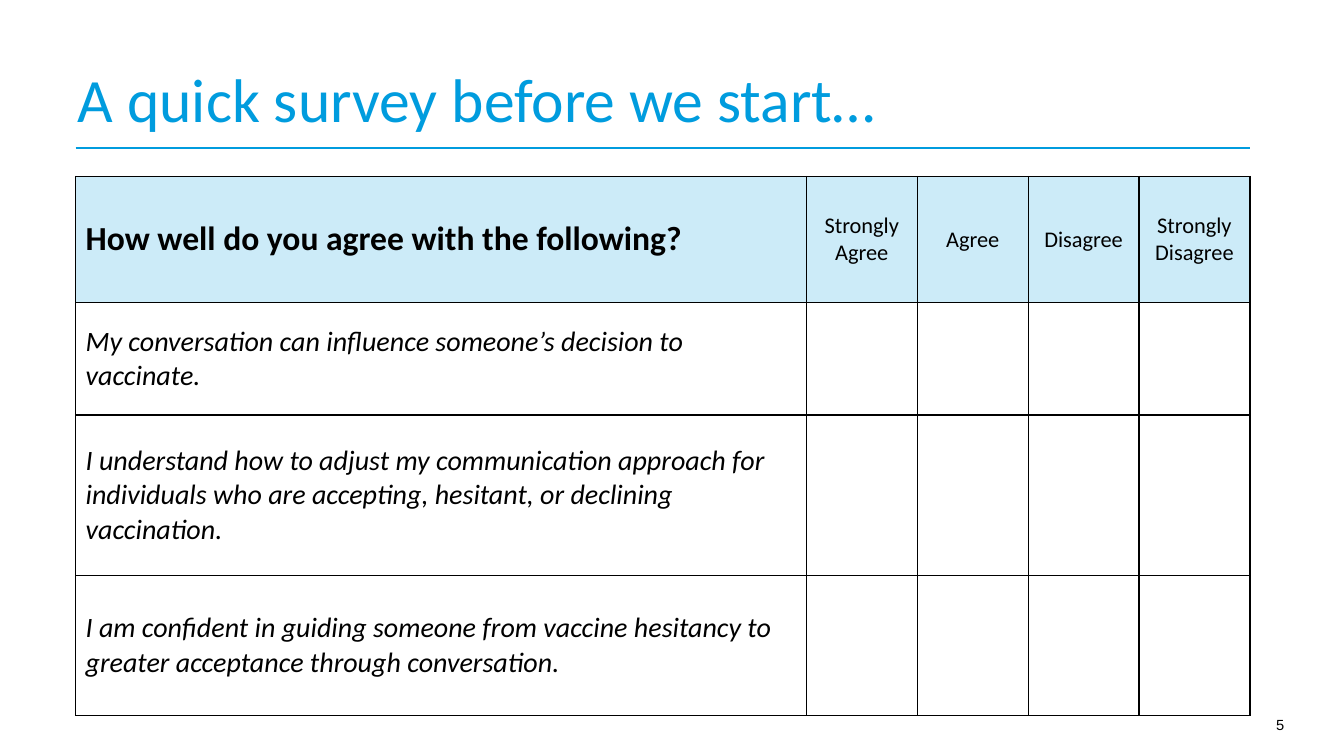
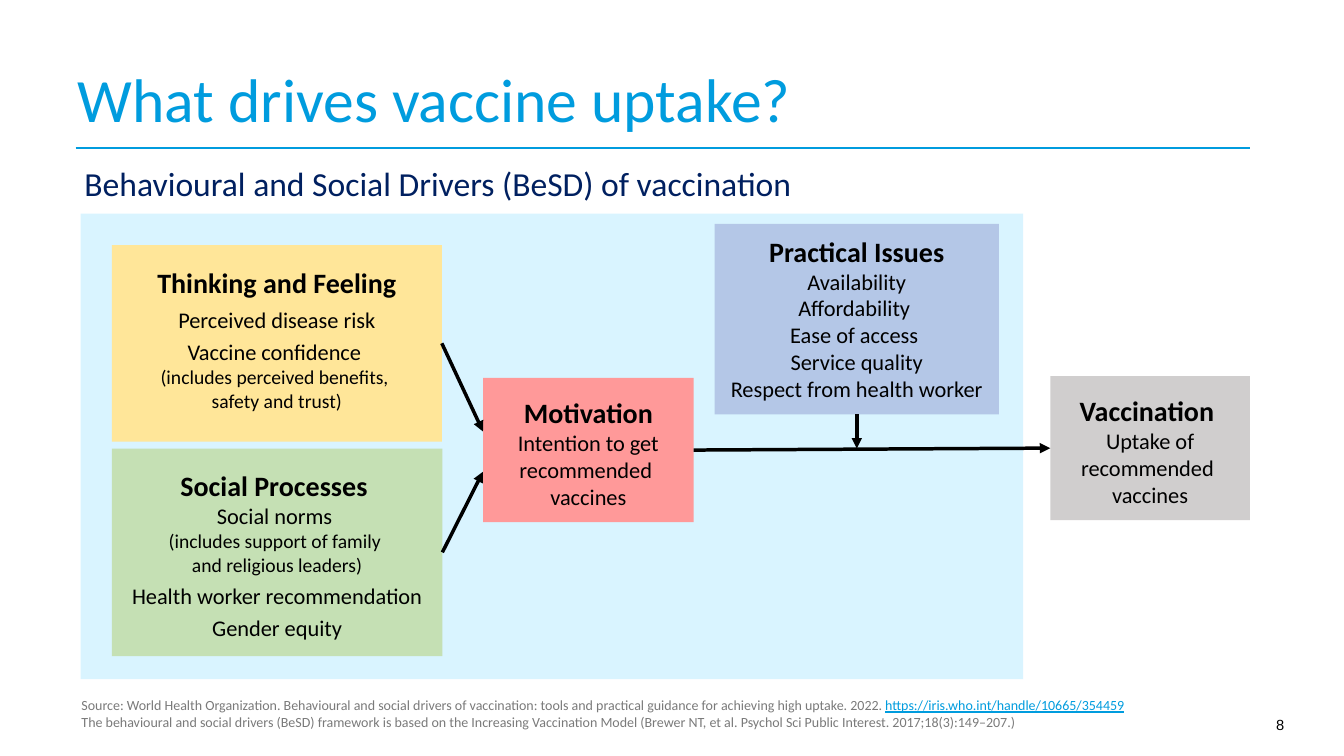
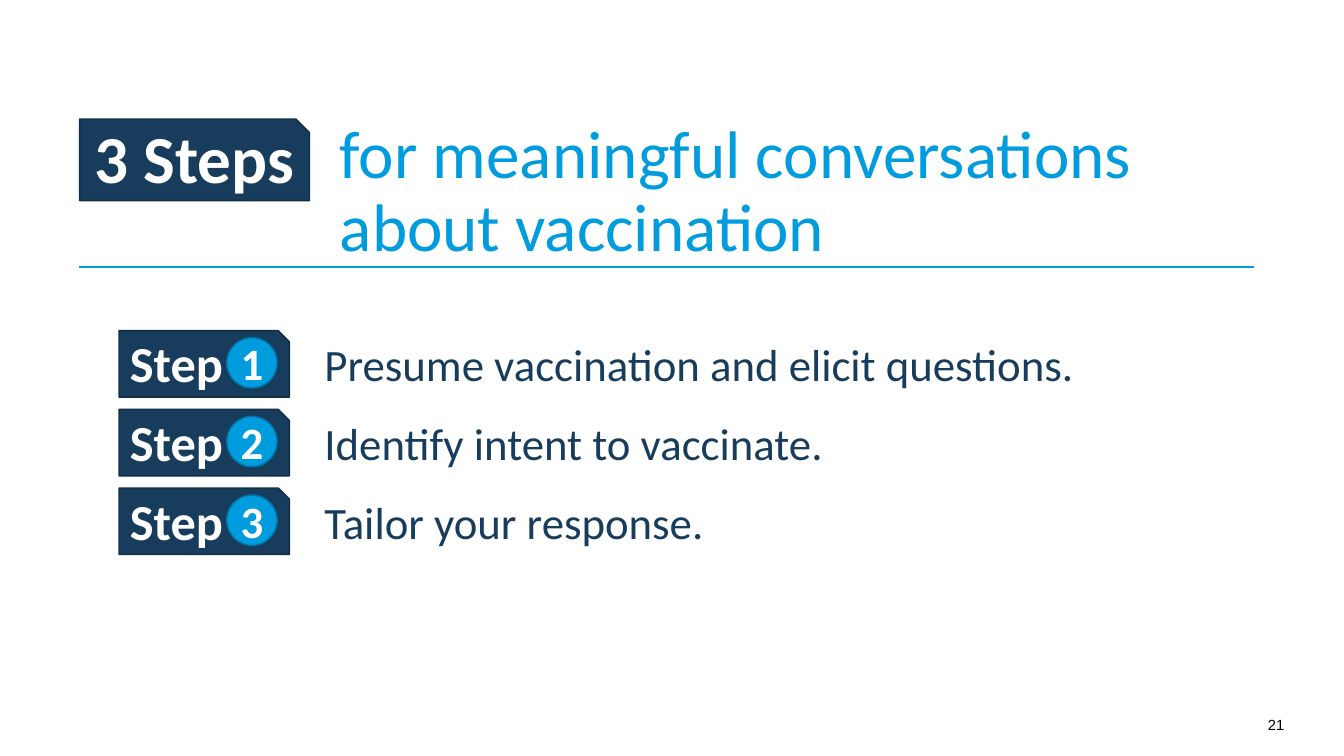
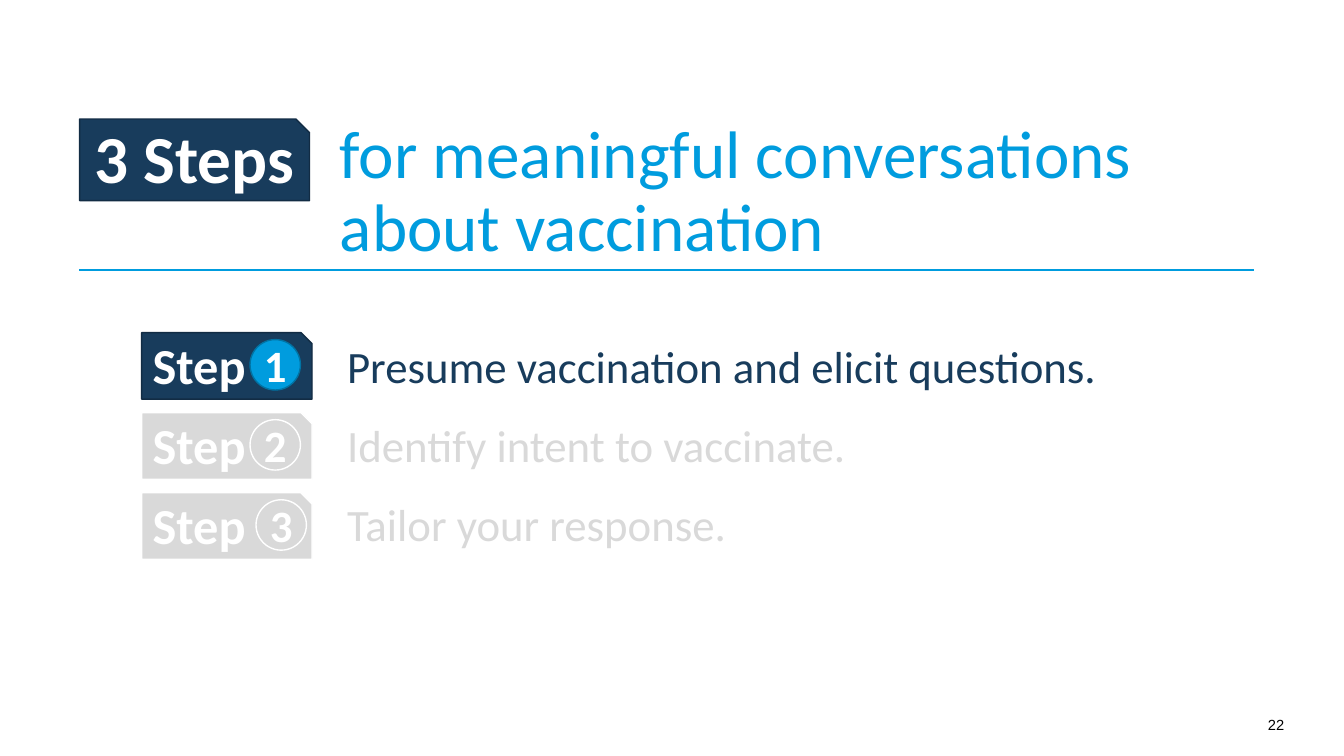
"""Builds four slides on conversations about vaccination."""
from lxml import etree
from pptx import Presentation
from pptx.dml.color import RGBColor
from pptx.enum import shapes, text
from pptx.oxml import ns
from pptx.util import Pt

BLUE = RGBColor(0x00, 0x9C, 0xDE)
BLUE_EDGE = RGBColor(0x00, 0x73, 0xA4)
NAVY = RGBColor(0x18, 0x3C, 0x5C)
NAVY_EDGE = RGBColor(0x12, 0x2C, 0x44)
INDIGO = RGBColor(0x00, 0x20, 0x60)
WHITE = RGBColor(0xFF, 0xFF, 0xFF)
BLACK = RGBColor(0x00, 0x00, 0x00)
GREY_TEXT = RGBColor(0x7A, 0x7A, 0x7A)
MUTED = RGBColor(0xD9, 0xD9, 0xD9)
HEADER = RGBColor(0xCC, 0xEB, 0xF8)
PANEL = RGBColor(0xD9, 0xF4, 0xFF)
YELLOW = RGBColor(0xFF, 0xE6, 0x99)
GREEN = RGBColor(0xC5, 0xE0, 0xB4)
RED = RGBColor(0xFF, 0x99, 0x99)
PERIWINKLE = RGBColor(0xB4, 0xC7, 0xE7)
SILVER = RGBColor(0xD0, 0xCE, 0xCE)

LEFT, CENTER, RIGHT = text.PP_ALIGN.LEFT, text.PP_ALIGN.CENTER, text.PP_ALIGN.RIGHT
TOP, MIDDLE, BOTTOM = text.MSO_ANCHOR.TOP, text.MSO_ANCHOR.MIDDLE, text.MSO_ANCHOR.BOTTOM
RECT = shapes.MSO_SHAPE.RECTANGLE
SNIP = shapes.MSO_SHAPE.SNIP_1_RECTANGLE
OVAL = shapes.MSO_SHAPE.OVAL
INSET = (7.2, 3.6, 7.2, 3.6)
STEPS = ("Presume vaccination and elicit questions.", "Identify intent to vaccinate.", "Tailor your response.")


def set_font(font, size, color=BLACK, name="Calibri", **fmt):
    """Apply size, colour, typeface and any further font attributes."""
    for key, value in {"size": Pt(size), "name": name, **fmt}.items():
        setattr(font, key, value)
    font.color.rgb = color


def write(tf, paragraphs, align=LEFT, **para_fmt):
    """Fill a frame; each paragraph is a list of (text, font values) runs."""
    for i, runs in enumerate(paragraphs):
        p = tf.add_paragraph() if i else tf.paragraphs[0]
        for key, value in {"alignment": align, **para_fmt}.items():
            setattr(p, key, value)
        for content, fmt in runs:
            r = p.add_run()
            r.text = content
            set_font(r.font, **fmt)


def frame(sp, anchor=TOP, inset=INSET):
    """Set up wrapping, anchor and insets, and return the text frame."""
    tf = sp.text_frame
    tf.word_wrap = True
    tf.vertical_anchor = anchor
    for side, value in zip(("left", "top", "right", "bottom"), inset):
        setattr(tf, f"margin_{side}", Pt(value))
    return tf


def add_text(parent, box, paragraphs, anchor=TOP, inset=INSET, **para_fmt):
    """Add a text box."""
    sp = parent.shapes.add_textbox(*map(Pt, box))
    write(frame(sp, anchor, inset), paragraphs, **para_fmt)


def add_block(parent, kind, box, fill, edge=None):
    """Add a filled preset shape with an optional outline."""
    sp = parent.shapes.add_shape(kind, *map(Pt, box))
    sp.shadow.inherit = False
    sp.fill.solid()
    sp.fill.fore_color.rgb = fill
    if edge is None:
        sp.line.fill.background()
    else:
        sp.line.color.rgb = edge
        sp.line.width = Pt(1)
    return sp


def add_line(s, start, end, color, width, arrow=False):
    """Add a straight line, optionally with an arrowhead at its end."""
    c = s.shapes.add_connector(shapes.MSO_CONNECTOR.STRAIGHT, *map(Pt, start + end))
    c.line.color.rgb = color
    c.line.width = Pt(width)
    props = c.element.spPr
    if arrow:
        etree.SubElement(props.find(ns.qn("a:ln")), ns.qn("a:tailEnd"), type="triangle")
    etree.SubElement(props, ns.qn("a:effectLst"))
    return c


def add_slide(prs, number, title, title_box, size, rule_left, rule_top):
    """Add a slide with its title, rule and page number."""
    s = prs.slides.add_slide(prs.slide_layouts[6])
    add_text(s, (860.4, 507.6, 64, 21), [[(number, {"size": 10.5, "name": "Arial"})]], align=RIGHT)
    add_line(s, (rule_left, rule_top), (rule_left + 838.8, rule_top), BLUE, 1.5)
    add_text(s, title_box, [[(row, {"size": size, "color": BLUE})] for row in title],
             BOTTOM, (1.6, 0, 28, 0), line_spacing=0.9)
    return s


def add_content_slide(prs, number, title):
    """Add a slide with a one-line title."""
    return add_slide(prs, number, [title], (54, 54, 808.6, 43.2), 44, 54, 105.8)


def style_cell(cell, fill):
    """Set a cell's fill, anchor and black borders."""
    cell.vertical_anchor = MIDDLE
    if fill is None:
        cell.fill.background()
    else:
        cell.fill.solid()
        cell.fill.fore_color.rgb = fill
    props = cell._tc.get_or_add_tcPr()
    for i, side in enumerate("LRTB"):
        ln = etree.Element(ns.qn(f"a:ln{side}"), w=str(Pt(1)))
        solid = etree.SubElement(ln, ns.qn("a:solidFill"))
        etree.SubElement(solid, ns.qn("a:srgbClr"), val=str(BLACK))
        props.insert(i, ln)


def add_survey(s, headings, statements, widths, heights):
    """Add the survey table with empty answer cells."""
    shape = s.shapes.add_table(len(heights), len(widths), Pt(54), Pt(126), Pt(sum(widths)), Pt(sum(heights)))
    table = shape.table
    table.first_row = table.horz_banding = False
    for column, width in zip(table.columns, widths):
        column.width = Pt(width)
    for row, height in zip(table.rows, heights):
        row.height = Pt(height)
    for i, row in enumerate(table.rows):
        for cell in row.cells:
            style_cell(cell, None if i else HEADER)
    for j, heading in enumerate(headings):
        fmt = {"size": 16} if j else {"size": 24, "bold": True}
        write(table.cell(0, j).text_frame, [[(heading, fmt)]], CENTER if j else LEFT)
    for i, statement in enumerate(statements, 1):
        write(table.cell(i, 0).text_frame, [[(statement, {"size": 20, "italic": True})]])


def add_driver(s, box, fill, heading, lines, anchor=TOP, inset=(7.2, 7.2, 7.2, 3.6)):
    """Add a box with a bold heading and (text, size, space before) lines."""
    sp = add_block(s, RECT, box, fill)
    tf = frame(sp, anchor, inset)
    write(tf, [[(heading, {"size": 20, "bold": True})]]
          + [[(content, {"size": size})] for content, size, _ in lines], CENTER)
    for p, (_, _, before) in zip(tf.paragraphs[1:], lines):
        p.space_before = Pt(before)
    return sp


def add_step(s, number, left, top, dot_left, active):
    """Add a Step badge with its numbered dot."""
    fill, edge, dot_fill, dot_edge = (NAVY, NAVY_EDGE, BLUE, BLUE_EDGE) if active else (MUTED, WHITE) * 2
    group = s.shapes.add_group_shape()
    add_block(group, SNIP, (left, top, 121.7, 47.5), fill, edge)
    add_text(group, (left + 0.7, top - 2.4, 86.4, 51), [[("Step", {"size": 36, "color": WHITE, "bold": True})]])
    dot = add_block(s, OVAL, (dot_left, top + 5, 36, 36), dot_fill, dot_edge)
    write(frame(dot, MIDDLE, (0, 0, 0, 0)), [[(str(number), {"size": 32, "color": WHITE, "bold": True})]], CENTER)


def add_steps_slide(prs, number, rule_top, left, top, pitch, dot_lefts, active):
    """Add a slide listing the three steps, with the active ones in colour."""
    s = add_slide(prs, number, ["for meaningful conversations", "about vaccination"],
                  (241.2, 125.3, 665.3, 64.8), 48, 56.6, rule_top)
    add_block(s, SNIP, (56.9, 85, 164.2, 58.3), NAVY, NAVY_EDGE)
    add_text(s, (60.5, 79.2, 164.2, 65.5), [[("3 Steps", {"size": 48, "color": WHITE, "bold": True})]])
    for i, dot_left in enumerate(dot_lefts):
        add_step(s, i + 1, left, top + i * pitch, dot_left, i < active)
    add_text(s, (left + 139.7, top + 0.7, 618, 160),
             [[(step, {"size": 32, "color": NAVY if i < active else MUTED})] for i, step in enumerate(STEPS)],
             space_after=Pt(18))


def add_drivers(s):
    """Add the diagram of behavioural and social drivers."""
    add_text(s, (53.3, 113, 720, 36),
             [[("Behavioural and Social Drivers (BeSD) of vaccination", {"size": 24, "color": INDIGO})]])
    add_block(s, RECT, (57.6, 152.6, 673.2, 332.6), PANEL)
    thinking = add_driver(s, (80, 175, 235.6, 140.4), YELLOW, "Thinking and Feeling", [
        ("Perceived disease risk", 16, 5), ("Vaccine confidence ", 16, 4),
        ("(includes perceived benefits, ", 14, 0), ("safety and trust)", 14, 0),
    ], inset=(7.2, 14.4, 7.2, 3.6))
    social = add_driver(s, (80, 320.4, 236, 148.3), GREEN, "Social Processes ", [
        ("Social norms ", 16, 0), ("(includes support of family ", 14, 0), ("and religious leaders)", 14, 0),
        ("Health worker recommendation", 16, 4), ("Gender equity", 16, 4),
    ], inset=(0, 14.4, 0, 3.6))
    motivation = add_driver(s, (345, 270, 150.5, 103), RED, "Motivation", [
        ("Intention to get", 16, 0), ("recommended ", 16, 0), ("vaccines", 16, 0)], MIDDLE)
    vaccination = add_driver(s, (750.2, 268.6, 142.6, 103), SILVER, "Vaccination ", [
        ("Uptake of recommended ", 16, 0), ("vaccines", 16, 0)], MIDDLE)
    practical = add_driver(s, (510.5, 160, 203, 136), PERIWINKLE, "Practical Issues", [
        (issue, 16, 0) for issue in ("Availability", "Affordability ", "Ease of access ", "Service quality",
                                     "Respect from health worker")], inset=(7.2, 7.2, 7.2, 7.2))
    for source, side, end in ((thinking, 3, (345, 308.2)), (social, 3, (345, 337)),
                              (motivation, 3, (750.2, 320.1)), (practical, 2, (612, 320.4))):
        c = add_line(s, (315.6, 245), end, BLACK, 2.5, arrow=True)
        c.begin_connect(source, side)
        if source is motivation:
            c.end_connect(vaccination, 1)


def main():
    """Build and save the presentation."""
    prs = Presentation()
    prs.slide_width, prs.slide_height = Pt(960), Pt(540)

    s = add_content_slide(prs, "5", "A quick survey before we start…")
    add_survey(s, ("How well do you agree with the following?", "Strongly Agree", "Agree", "Disagree",
                   "Strongly Disagree"),
               ("My conversation can influence someone’s decision to vaccinate.",
                "I understand how to adjust my communication approach for individuals who are accepting, "
                "hesitant, or declining vaccination.",
                "I am confident in guiding someone from vaccine hesitancy to greater acceptance through "
                "conversation."),
               [522] + [79.2] * 4, [90, 80.5, 114.5, 100])

    s = add_content_slide(prs, "8", "What drives vaccine uptake?")
    add_drivers(s)
    note = {"size": 10, "color": GREY_TEXT}
    add_text(s, (51.1, 494, 879, 32.4), [
        [("Source: World Health Organization. Behavioural and social drivers of vaccination: tools and practical "
          "guidance for achieving high uptake. 2022. ", note),
         ("https://iris.who.int/handle/10665/354459", {"size": 10, "color": BLUE, "underline": True})],
        [("The behavioural and social drivers (BeSD) framework is based on the Increasing Vaccination Model "
          "(Brewer NT, et al. Psychol Sci Public Interest. 2017;18(3):149–207.)", note)]])

    add_steps_slide(prs, "21", 190.8, 85, 236.2, 56.2, (162, 162, 162), active=3)
    add_steps_slide(prs, "22", 193, 101.2, 237.6, 57.2, (178.6, 178.6, 182.9), active=1)
    prs.save("out.pptx")


if __name__ == "__main__":
    main()
